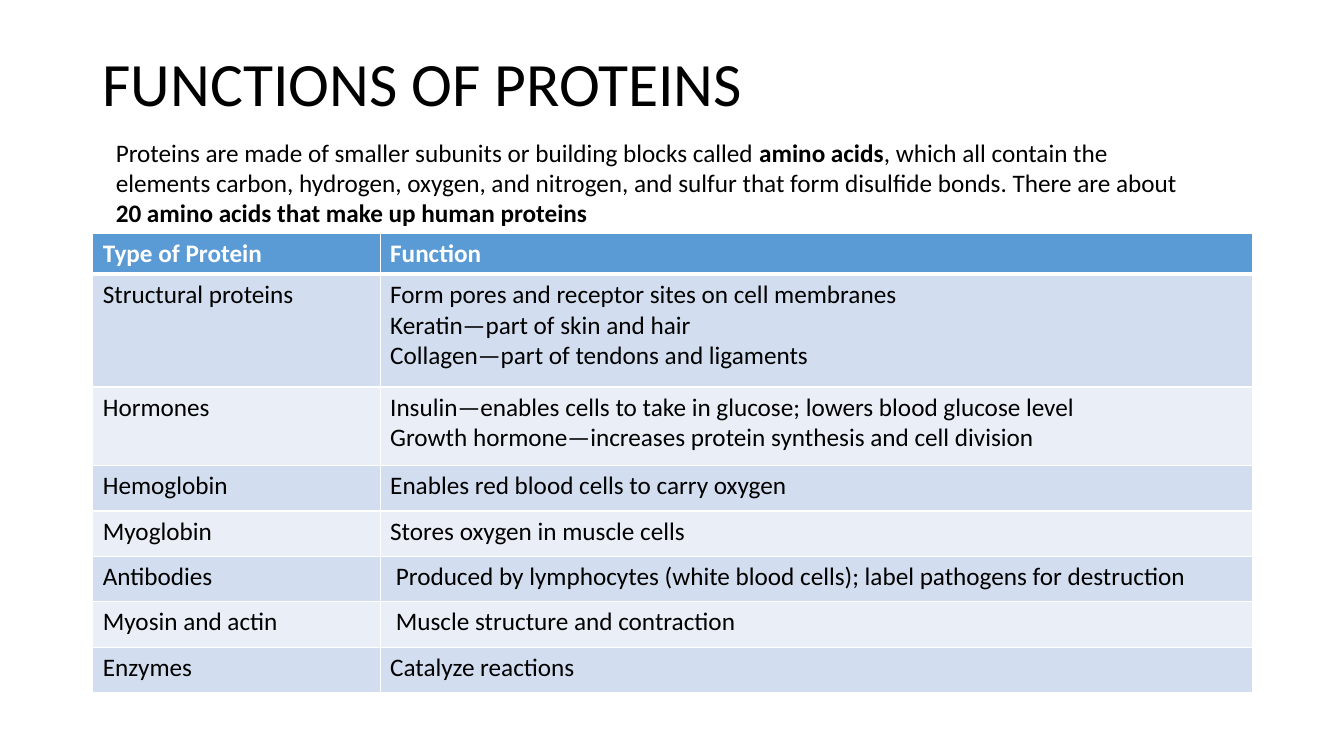
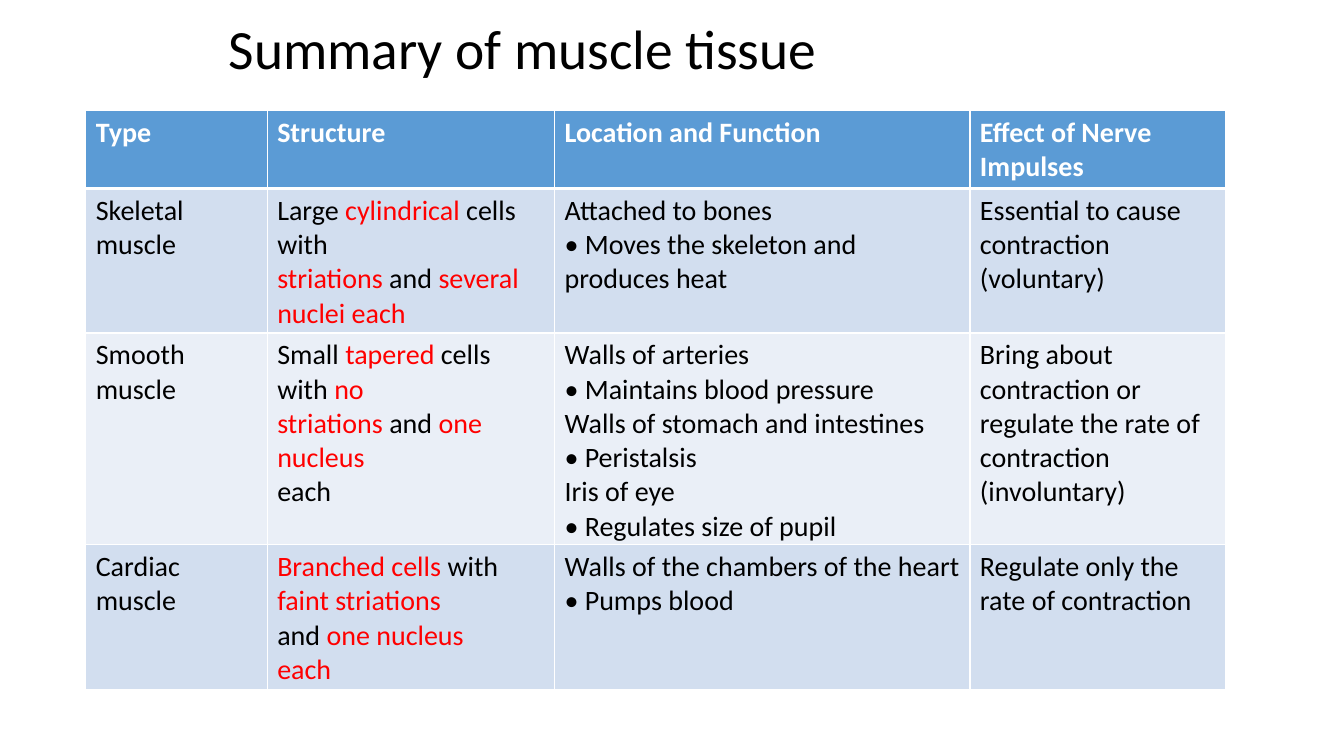
from lxml import etree
from pptx import Presentation
from pptx.dml.color import RGBColor
from pptx.enum import text
from pptx.oxml import ns
from pptx.util import Inches, Pt

FONT = "Calibri"
BLACK, WHITE, RED = "000000", "FFFFFF", "FF0000"
HEADER, BANDS = "5B9BD5", ("D2DEEF", "EAEFF7")
BULLET = "• "


def write(frame, content, size, color=BLACK, bold=False, marked=None, spacing=None):
    """Write one paragraph a line; *starred* words take the marked colour, or bold."""
    frame.word_wrap = True
    for number, line in enumerate(content.split("\n")):
        para = frame.paragraphs[0] if number == 0 else frame.add_paragraph()
        if line.startswith(BULLET):
            line = line.removeprefix(BULLET)
            properties = para._p.get_or_add_pPr()
            properties.set("marL", str(Inches(0.2)))
            properties.set("indent", str(-Inches(0.2)))
            etree.SubElement(properties, ns.qn("a:buFont"), typeface=FONT)
            etree.SubElement(properties, ns.qn("a:buChar"), char=BULLET.strip())
        if spacing:
            para.line_spacing = spacing
        for index, words in enumerate(line.split("*")):
            if not words:
                continue
            starred = index % 2 == 1
            span = para.add_run()
            span.text = words
            span.font.name = FONT
            span.font.size = Pt(size)
            span.font.bold = bold or (starred and marked is None)
            span.font.color.rgb = RGBColor.from_string(marked if starred and marked else color)


def add_banded_table(page, left, top, widths, heights, rows, size):
    frame = page.shapes.add_table(len(rows), len(widths), Inches(left), Inches(top),
                                  Inches(sum(widths)), Inches(sum(heights)))
    table = frame.table
    for column, width in zip(table.columns, widths):
        column.width = Inches(width)
    for r, (contents, height) in enumerate(zip(rows, heights)):
        table.rows[r].height = Inches(height)
        is_header = r == 0
        for c, content in enumerate(contents):
            cell = table.cell(r, c)
            write(cell.text_frame, content, size, WHITE if is_header else BLACK,
                  bold=is_header, marked=RED)
            properties = cell._tc.get_or_add_tcPr()
            for side in "LRTB":
                thick = (is_header and side == "B") or (r == 1 and side == "T")
                border = etree.SubElement(properties, ns.qn(f"a:ln{side}"),
                                          w=str(Pt(3 if thick else 1)))
                paint = etree.SubElement(border, ns.qn("a:solidFill"))
                etree.SubElement(paint, ns.qn("a:srgbClr"), val=WHITE)
            cell.fill.solid()
            cell.fill.fore_color.rgb = RGBColor.from_string(
                HEADER if is_header else BANDS[(r - 1) % 2])


deck = Presentation()
deck.slide_width, deck.slide_height = Inches(13.33), Inches(7.5)

titles = [
    ("FUNCTIONS OF PROTEINS", 44, (0.92, 0.4, 11.5, 0.91)),
    ("Summary of muscle tissue", 39.6, (2.17, 0.17, 9, 0.69)),
]
pages = []
for title, size, place in titles:
    page = deck.slides.add_slide(deck.slide_layouts[6])
    box = page.shapes.add_textbox(*map(Inches, place))
    box.text_frame.vertical_anchor = text.MSO_ANCHOR.MIDDLE
    write(box.text_frame, title, size, spacing=0.9)
    pages.append(page)
proteins, muscles = pages

# Functions of proteins
protein_rows = [
    ("Type of Protein", "Function"),
    ("Structural proteins",
     "Form pores and receptor sites on cell membranes\n"
     "Keratin—part of skin and hair\n"
     "Collagen—part of tendons and ligaments"),
    ("Hormones",
     "Insulin—enables cells to take in glucose; lowers blood glucose level\n"
     "Growth hormone—increases protein synthesis and cell division"),
    ("Hemoglobin", "Enables red blood cells to carry oxygen"),
    ("Myoglobin", "Stores oxygen in muscle cells"),
    ("Antibodies",
     " Produced by lymphocytes (white blood cells); label pathogens for destruction"),
    ("Myosin and actin", " Muscle structure and contraction"),
    ("Enzymes", "Catalyze reactions"),
]
add_banded_table(proteins, 0.92, 2.32, [2.85, 8.65], [0.4, 1.12, 0.78] + [0.45] * 5,
                 protein_rows, 18)
intro = proteins.shapes.add_textbox(Inches(1.05), Inches(1.31), Inches(10.83), Inches(1.01))
write(intro.text_frame,
      "Proteins are made of smaller subunits or building blocks called *amino acids*, "
      "which all contain the elements carbon, hydrogen, oxygen, and nitrogen, and sulfur "
      "that form disulfide bonds. There are about "
      "*20 amino acids that make up human proteins*", 18)

# Summary of muscle tissue
muscle_rows = [
    ("Type", "Structure", "Location and Function", "Effect of Nerve Impulses"),
    ("Skeletal muscle",
     "Large *cylindrical* cells with\n*striations* and *several*\n*nuclei each*",
     "Attached to bones\n• Moves the skeleton and\nproduces heat",
     "Essential to cause contraction\n(voluntary)"),
    ("Smooth muscle",
     "Small *tapered* cells with *no*\n*striations *and *one nucleus*\neach",
     "Walls of arteries\n• Maintains blood pressure\n"
     "Walls of stomach and intestines\n• Peristalsis\n"
     "Iris of eye\n• Regulates size of pupil",
     "Bring about contraction or\nregulate the rate of contraction\n(involuntary)"),
    ("Cardiac muscle",
     "*Branched cells *with *faint striations*\nand *one nucleus*\n*each*",
     "Walls of the chambers of the heart\n• Pumps blood",
     "Regulate only the rate of contraction"),
]
add_banded_table(muscles, 0.85, 1.1, [1.8, 2.85, 4.12, 2.54], [0.77, 1.43, 2.08, 1.43],
                 muscle_rows, 20)

deck.save("out.pptx")
